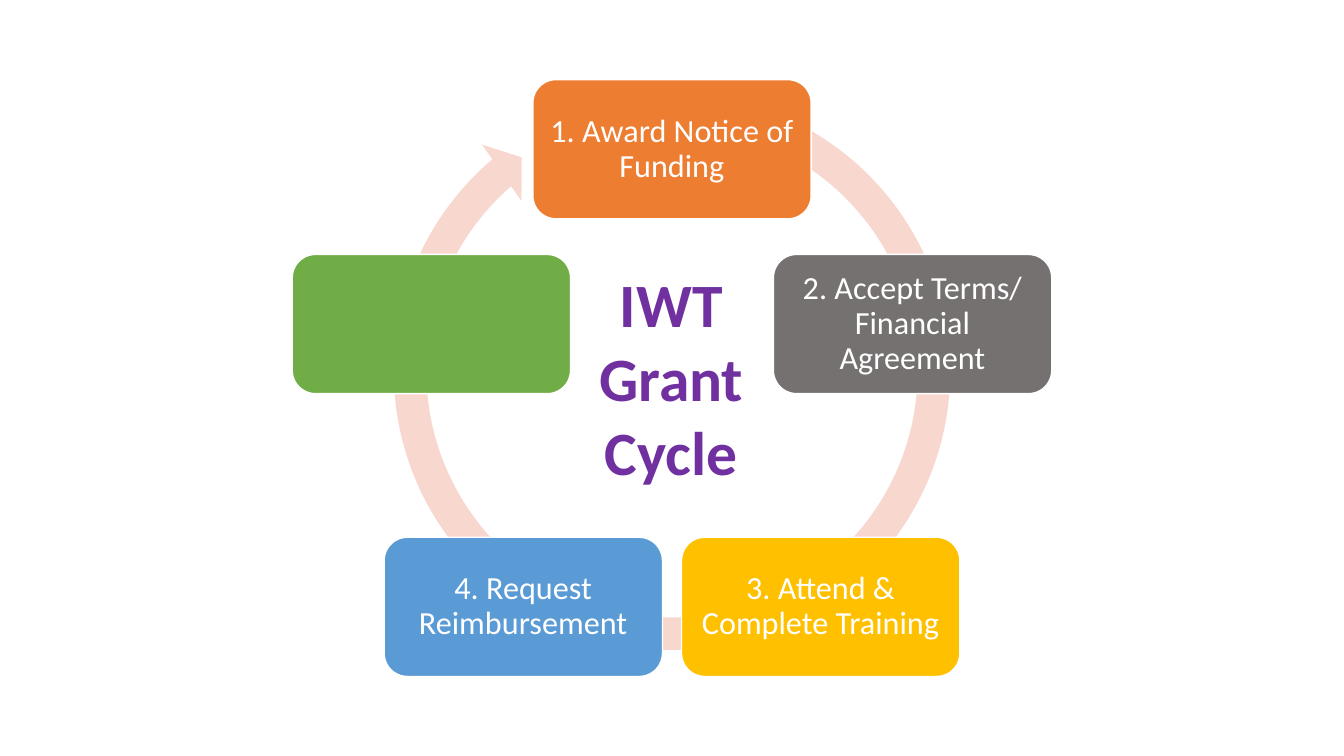
from math import cos, radians, sin
from pptx import Presentation
from pptx.dml.color import RGBColor
from pptx.enum.shapes import MSO_SHAPE
from pptx.enum.text import MSO_ANCHOR, MSO_AUTO_SIZE, PP_ALIGN
from pptx.util import Pt

COLORS = {
    "ring": "F8D7CE", "award": "ED7D31", "accept": "767171",
    "train": "FFC000", "claim": "5B9BD5", "last": "70AD47",
    "white": "FFFFFF", "title": "7030A0",
}


def color(name):
    return RGBColor.from_string(COLORS[name])


def write(frame, text, size, tint, bold=False, pad=7.2, space=1.0):
    frame.word_wrap = True
    frame.margin_left = frame.margin_right = Pt(pad)
    frame.text = text
    for para in frame.paragraphs:
        para.alignment = PP_ALIGN.CENTER
        para.line_spacing = space
        font = para.runs[0].font
        font.name = "Calibri"
        font.size = Pt(size)
        font.bold = bold
        font.color.rgb = color(tint)


deck = Presentation()
deck.slide_width, deck.slide_height = Pt(960), Pt(540)
slide = deck.slides.add_slide(deck.slide_layouts[6])
shapes = slide.shapes

ring = shapes.add_shape(MSO_SHAPE.CIRCULAR_ARROW, Pt(268.4), Pt(54), Pt(423.2), Pt(423.2))
for index, value in enumerate([0.055, 3.307, 137.676, 173.91, 0.058]):
    ring.adjustments[index] = value
ring.shadow.inherit = False
ring.fill.solid()
ring.fill.fore_color.rgb = color("ring")
ring.line.fill.background()

STEPS = [
    ("award", "1. Award Notice of Funding"),
    ("accept", "2. Accept Terms/ Financial Agreement"),
    ("train", "3. Attend & Complete Training"),
    ("claim", "4. Request Reimbursement"),
    ("last", ""),
]
MID_X, MID_Y, RADIUS = 480, 287.3, 180.7
WIDTH, HEIGHT = 198.8, 99.4

for index, (name, text) in enumerate(STEPS):
    angle = radians(index * 360 / len(STEPS))
    left = MID_X + RADIUS * sin(angle) - WIDTH / 2
    top = MID_Y - RADIUS * cos(angle) - HEIGHT / 2
    box = shapes.add_shape(MSO_SHAPE.ROUNDED_RECTANGLE, Pt(left), Pt(top), Pt(WIDTH), Pt(HEIGHT))
    box.shadow.inherit = False
    box.fill.solid()
    box.fill.fore_color.rgb = color(name)
    box.line.color.rgb = color("white")
    box.line.width = Pt(1)
    if text:
        box.text_frame.vertical_anchor = MSO_ANCHOR.MIDDLE
        write(box.text_frame, text, size=23, tint="white", pad=6.9, space=0.9)

title = shapes.add_textbox(Pt(412.6), Pt(186.5), Pt(133.9), Pt(167))
write(title.text_frame, "IWT\nGrant Cycle", size=44, tint="title", bold=True)
title.text_frame.auto_size = MSO_AUTO_SIZE.SHAPE_TO_FIT_TEXT

deck.save("out.pptx")
